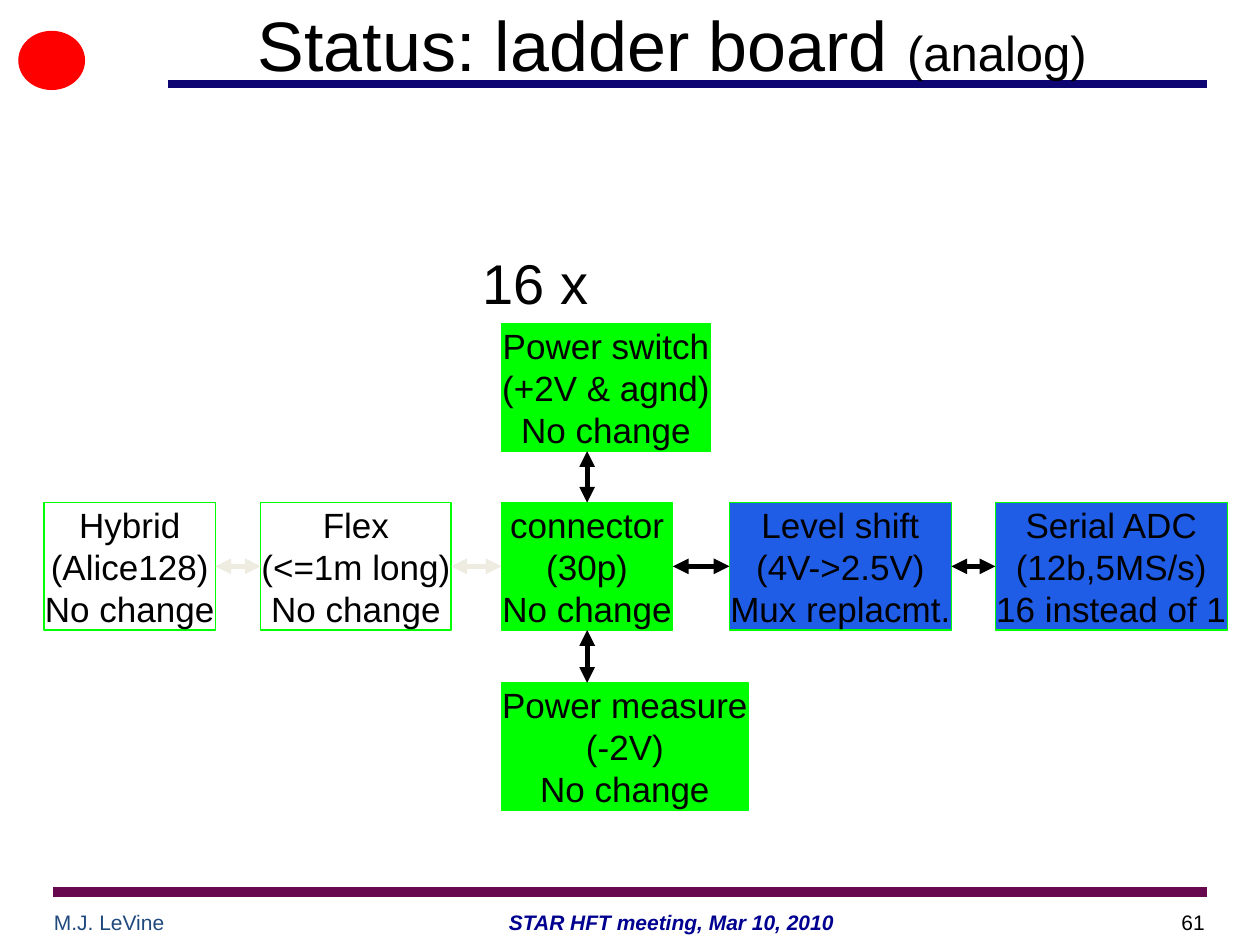
import pptx
import pptx.dml.color
import pptx.enum.shapes
import pptx.enum.text
import pptx.oxml.ns
import pptx.util
from lxml import etree
from pptx.util import Inches

COLOURS = {
    "black": "000000", "red": "FF0000", "navy": "0C0572", "plum": "68084E",
    "author": "1F497D", "meeting": "000090", "green": "00FF00",
    "blue": "205DE7", "pale": "EEECE1",
}
ALIGN = pptx.enum.text.PP_ALIGN
SHAPES = pptx.enum.shapes.MSO_SHAPE
AUTO_SIZE = pptx.enum.text.MSO_AUTO_SIZE
TOP, LEFT, BOTTOM, RIGHT = range(4)
ROW_TOP, BOX_HEIGHT = 3.99, 1.01


def colour(name):
    """Return the named colour."""
    return pptx.dml.color.RGBColor.from_string(COLOURS[name])


def write(para, text, size=20, tint="black", bold=False, italic=False, align=ALIGN.CENTER):
    """Add formatted text to a paragraph, with line breaks at newlines."""
    para.alignment = align
    for index, line in enumerate(text.split("\n")):
        if index:
            para.add_line_break()
        span = para.add_run()
        span.text = line
        span.font.name = "Arial"
        span.font.size = pptx.util.Pt(size)
        span.font.bold = bold
        span.font.italic = italic
        span.font.color.rgb = colour(tint)


def place(shape, left, top, width, height):
    """Move and size a shape in inches."""
    shape.left, shape.top = Inches(left), Inches(top)
    shape.width, shape.height = Inches(width), Inches(height)


def add_label(page, text, left, top, width, height, **style):
    """Add a wrapped text box."""
    box = page.shapes.add_textbox(Inches(left), Inches(top), Inches(width), Inches(height))
    box.text_frame.word_wrap = True
    write(box.text_frame.paragraphs[0], text, **style)


def add_shape(page, kind, left, top, width, height, fill, line):
    """Add a flat shape with the given fill and outline."""
    shape = page.shapes.add_shape(
        kind, Inches(left), Inches(top), Inches(width), Inches(height))
    shape.shadow.inherit = False
    if fill:
        shape.fill.solid()
        shape.fill.fore_color.rgb = colour(fill)
    else:
        shape.fill.background()
    shape.line.color.rgb = colour(line)
    shape.line.width = pptx.util.Pt(0.75)
    return shape


def add_block(page, heading, status, left, top, width, fill):
    """Add a block of the signal chain with its status."""
    block = add_shape(page, SHAPES.RECTANGLE, left, top, width, BOX_HEIGHT, fill, "green")
    frame = block.text_frame
    frame.margin_left = frame.margin_right = frame.margin_top = frame.margin_bottom = 0
    frame.word_wrap = False
    write(frame.paragraphs[0], heading)
    write(frame.add_paragraph(), status)
    return block


def add_line(page, start, end, tint, width, arrows=False):
    """Add a straight line, with arrowheads at both ends on request."""
    line = page.shapes.add_connector(
        pptx.enum.shapes.MSO_CONNECTOR.STRAIGHT,
        Inches(start[0]), Inches(start[1]), Inches(end[0]), Inches(end[1]))
    line.line.color.rgb = colour(tint)
    line.line.width = pptx.util.Pt(width)
    if arrows:
        outline = line.line._get_or_add_ln()
        for tag in ("a:headEnd", "a:tailEnd"):
            etree.SubElement(outline, pptx.oxml.ns.qn(tag), type="triangle")
    etree.SubElement(line._element.spPr, pptx.oxml.ns.qn("a:effectLst"))
    return line


def add_frame(page):
    """Add the emblem, rules and footer."""
    add_shape(page, SHAPES.OVAL, 0.15, 0.25, 0.52, 0.46, "red", "red")
    add_line(page, (1.33, 0.67), (9.58, 0.67), "navy", 4.5)
    add_line(page, (0.42, 7.08), (9.58, 7.08), "plum", 6)
    add_label(page, "M.J. LeVine", 0.33, 7.17, 1.17, 0.25,
              size=12, tint="author", align=ALIGN.LEFT)
    add_label(page, "STAR HFT meeting, Mar 10, 2010", 2.08, 7.17, 6.5, 0.3,
              size=12, tint="meeting", bold=True, italic=True)
    add_label(page, "61", 7.58, 7.17, 2.08, 0.25, size=12, align=ALIGN.RIGHT)


def fill_placeholders(page):
    """Write the title and the multiplier line above the rules."""
    title, body = page.shapes.title, page.placeholders[1]
    place(title, 1.17, 0.08, 8.33, 0.53)
    place(body, 0, 1.92, 8.5, 4.5)
    for holder in (title, body):
        holder.text_frame.auto_size = AUTO_SIZE.NONE
        page.shapes._spTree.append(holder._element)
    title.text_frame.vertical_anchor = pptx.enum.text.MSO_ANCHOR.MIDDLE
    heading = title.text_frame.paragraphs[0]
    write(heading, "Status: ladder board ", size=40)
    write(heading, "(analog)", size=28)
    para = body.text_frame.paragraphs[0]
    properties = para._p.get_or_add_pPr()
    properties.set("marL", "0")
    properties.set("indent", "0")
    etree.SubElement(properties, pptx.oxml.ns.qn("a:buNone"))
    para.space_before = pptx.util.Pt(0)
    write(para, "16 x", size=32)


def add_diagram(page):
    """Add the signal chain and the power blocks with their arrows."""
    chain = [add_block(page, heading, status, left, ROW_TOP, width, fill)
             for heading, status, left, width, fill in (
                 ("Hybrid\n(Alice128)", "No change", 0.35, 1.36, None),
                 ("Flex\n(<=1m long)", "No change", 2.07, 1.51, None),
                 ("connector\n(30p)", "No change", 3.98, 1.36, "green"),
                 ("Level shift\n(4V->2.5V)", "Mux replacmt.", 5.79, 1.76, "blue"),
                 ("Serial ADC\n(12b,5MS/s)", "16 instead of 1", 7.9, 1.84, "blue"))]
    for index, (before, after) in enumerate(zip(chain, chain[1:])):
        arrow = add_line(page, (0, 0), (1, 0), "pale" if index < 2 else "black", 3, arrows=True)
        arrow.begin_connect(before, RIGHT)
        arrow.end_connect(after, LEFT)
    hub, centre = chain[2], 4.66
    for heading, top, width, end, side in (
            ("Power switch\n(+2V & agnd)", 2.57, 1.66, 3.58, TOP),
            ("Power measure\n(-2V)", 5.42, 1.96, 5.42, BOTTOM)):
        add_block(page, heading, "No change", 3.98, top, width, "green")
        arrow = add_line(page, (centre, ROW_TOP), (centre, end), "black", 3, arrows=True)
        arrow.begin_connect(hub, side)


def main():
    """Build and save the slide."""
    deck = pptx.Presentation()
    deck.slide_width, deck.slide_height = Inches(10), Inches(7.5)
    page = deck.slides.add_slide(deck.slide_layouts[1])
    add_frame(page)
    fill_placeholders(page)
    add_diagram(page)
    deck.save("out.pptx")


if __name__ == "__main__":
    main()
